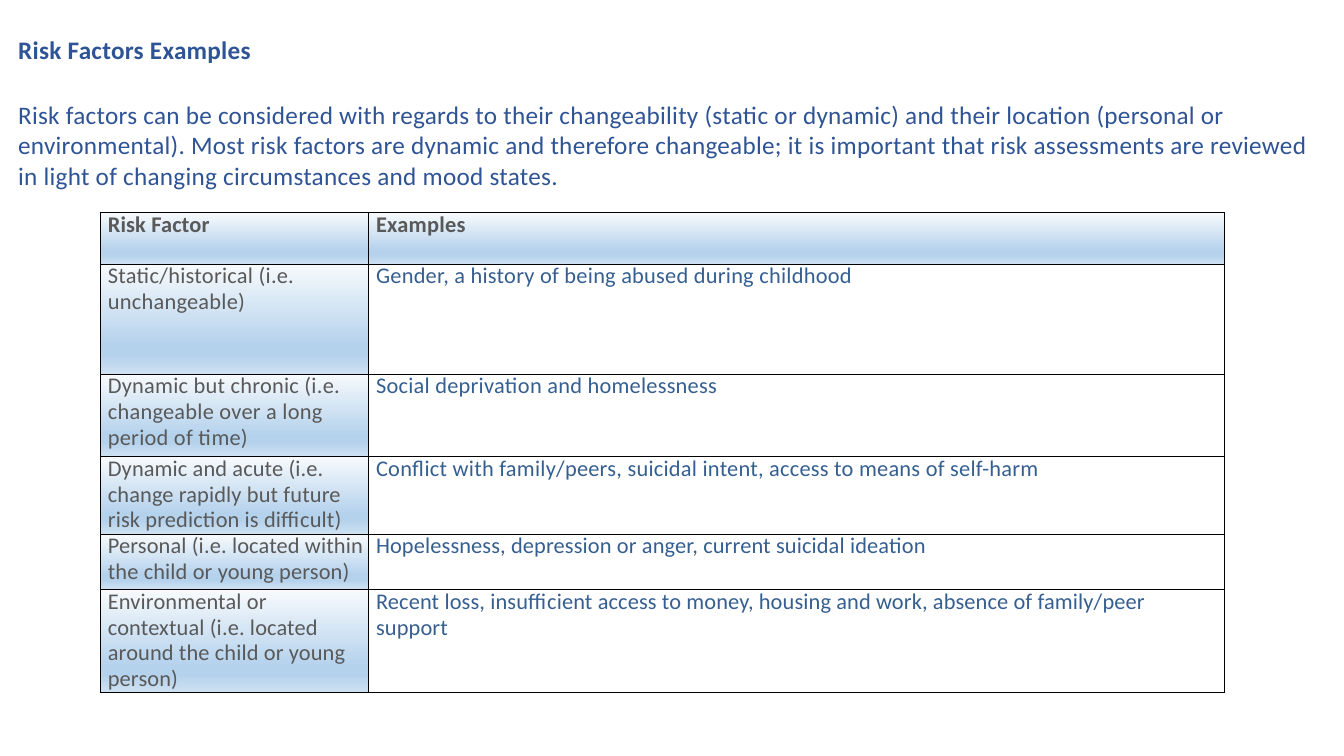
from lxml import etree
from pptx import Presentation
from pptx import util as u
from pptx.dml.color import RGBColor
from pptx.enum import text
from pptx.oxml import ns

COLORS = {
    "title": "2F5496", "factor": "595959", "example": "365F91", "border": "000000",
    "pale": "F7FAFD", "mid": "B5D2EC", "soft": "CEE1F2",
}
GRADIENT = [(0, "pale"), (74, "mid"), (83, "mid"), (100, "soft")]
HEADING = "Risk Factors Examples"
INTRO = (
    "Risk factors can be considered with regards to their changeability (static or dynamic) "
    "and their location (personal or environmental). Most risk factors are dynamic and therefore "
    "changeable; it is important that risk assessments are reviewed in light of changing "
    "circumstances and mood states."
)
ROWS = [
    (0.51, ("Risk Factor", 0.1), ("Examples", 0.2)),
    (1.09, ("Static/historical (i.e. unchangeable)", 0.2),
     ("Gender, a history of being abused during childhood", 0.2)),
    (0.82, ("Dynamic but chronic (i.e. changeable over a long period of time)", 0.2),
     ("Social deprivation and homelessness", 0.2)),
    (0.77, ("Dynamic and acute (i.e. change rapidly but future risk prediction is difficult)", 0.1),
     ("Conflict with family/peers, suicidal intent, access to means of self-harm", 0.2)),
    (0.55, ("Personal (i.e. located within the child or young person)", 0.1),
     ("Hopelessness, depression or anger, current suicidal ideation", 0.1)),
    (1.02, ("Environmental or contextual (i.e. located around the child or young person)", 0.1),
     ("Recent loss, insufficient access to money, housing and work, "
      "absence of family/peer support", 0.1)),
]


class SlideBuilder:
    font = "Calibri"

    def __init__(self, prs):
        self.s = prs.slides.add_slide(prs.slide_layouts[6])

    def style(self, p, size, color, bold, spacing, indent):
        p._p.get_or_add_pPr().set("marL", str(u.Inches(indent)))
        for r in p.runs:
            r.font.name = self.font
            r.font.size = u.Pt(size)
            r.font.bold = bold
            r.font.color.rgb = RGBColor.from_string(COLORS[color])
            r._r.get_or_add_rPr().set("spc", str(round(spacing * 100)))

    def add(self, parent, tag, **attrs):
        return etree.SubElement(parent, ns.qn(tag), attrs)

    def add_color(self, parent, color):
        self.add(parent, "a:srgbClr", val=COLORS[color])

    def decorate(self, cell, shaded):
        tcPr = cell._tc.get_or_add_tcPr()
        for side in "LRTB":
            ln = self.add(tcPr, f"a:ln{side}", w=str(u.Pt(0.5)))
            self.add_color(self.add(ln, "a:solidFill"), "border")
        if not shaded:
            self.add(tcPr, "a:noFill")
            return
        grad = self.add(tcPr, "a:gradFill", rotWithShape="1")
        stops = self.add(grad, "a:gsLst")
        for position, color in GRADIENT:
            self.add_color(self.add(stops, "a:gs", pos=str(position * 1000)), color)
        self.add(grad, "a:lin", ang="5400000", scaled="0")

    def text_box(self, left, top, width, height, heading, body):
        tf = self.s.shapes.add_textbox(*map(u.Inches, (left, top, width, height))).text_frame
        tf.word_wrap = True
        tf.auto_size = text.MSO_AUTO_SIZE.SHAPE_TO_FIT_TEXT
        tf.margin_left = tf.margin_right = tf.margin_bottom = 0
        tf.margin_top = u.Inches(0.02)
        tf.text = heading
        self.style(tf.paragraphs[0], 18, "title", True, 0.2, 0.01)
        p = tf.add_paragraph()
        p.text = body
        p.space_before = u.Pt(25)
        self.style(p, 18, "title", False, 0.2, 0.01)

    def cell(self, cell, content, spacing, color, bold, shaded):
        cell.margin_left = cell.margin_right = cell.margin_top = cell.margin_bottom = 0
        cell.text_frame.text = content
        p = cell.text_frame.paragraphs[0]
        p.line_spacing = u.Pt(18.4)
        self.style(p, 16, color, bold, spacing, 0.08)
        self.decorate(cell, shaded)

    def table(self, left, top, widths, rows):
        height = sum(row[0] for row in rows)
        table = self.s.shapes.add_table(
            len(rows), len(widths), *map(u.Inches, (left, top, sum(widths), height))).table
        table.first_row = table.horz_banding = False
        for column, width in zip(table.columns, widths):
            column.width = u.Inches(width)
        for i, (row_height, *entries) in enumerate(rows):
            table.rows[i].height = u.Inches(row_height)
            header = i == 0
            for j, (content, spacing) in enumerate(entries):
                shaded = header or j == 0
                color = "factor" if shaded else "example"
                self.cell(table.cell(i, j), content, spacing, color, header, shaded)


def main():
    prs = Presentation()
    prs.slide_width, prs.slide_height = u.Inches(13.33), u.Inches(7.5)
    slide = SlideBuilder(prs)
    slide.table(0.99, 2.11, (2.66, 8.49), ROWS)
    slide.text_box(0.17, 0.32, 12.99, 1.56, HEADING, INTRO)
    prs.save("out.pptx")


if __name__ == "__main__":
    main()
